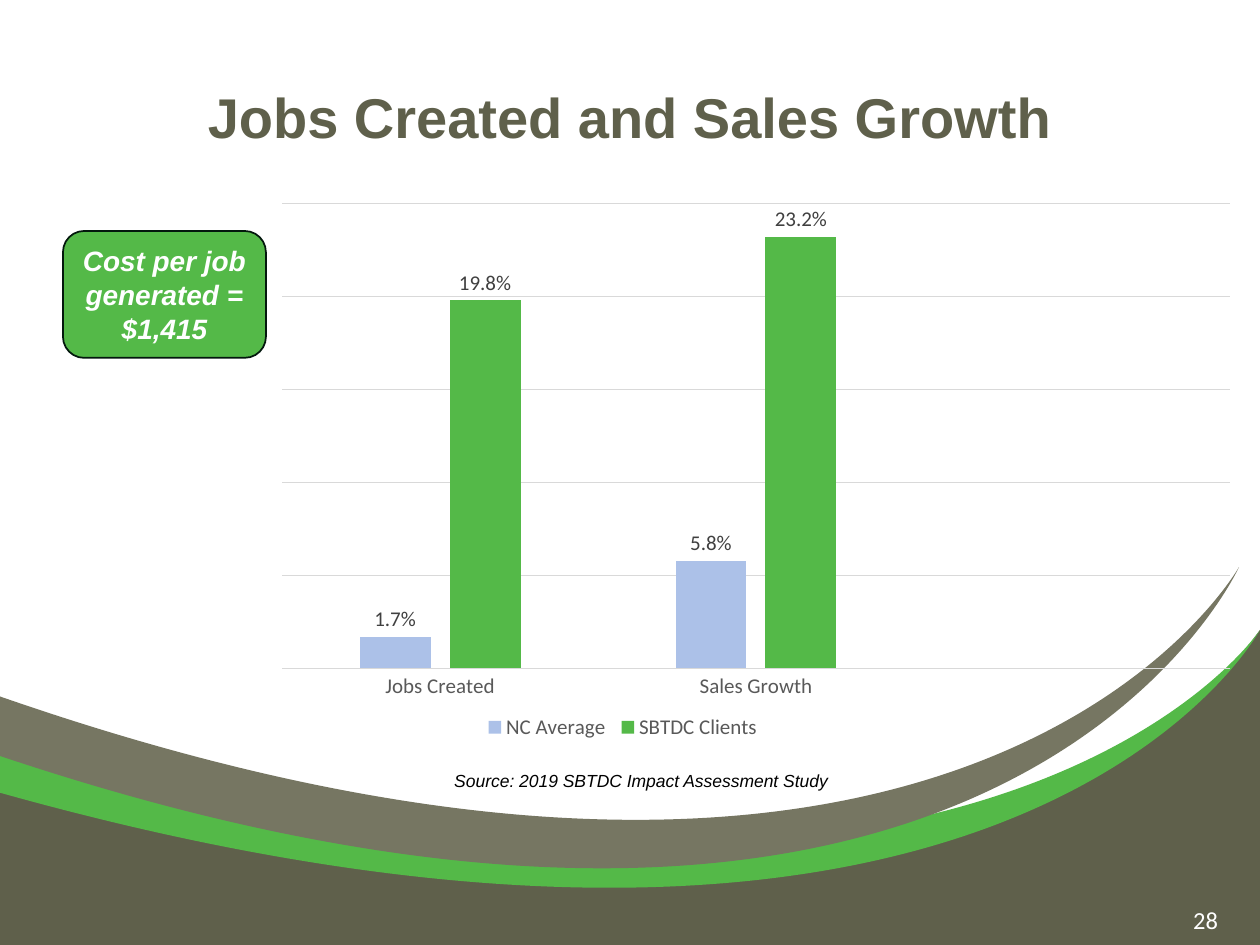
from lxml import etree
from pptx import Presentation
from pptx.chart.data import CategoryChartData
from pptx.dml.color import RGBColor
from pptx.enum.chart import XL_CHART_TYPE as ChartType
from pptx.enum.chart import XL_LABEL_POSITION as LabelPosition
from pptx.enum.chart import XL_LEGEND_POSITION as LegendPosition
from pptx.enum.chart import XL_TICK_LABEL_POSITION as TickLabels
from pptx.enum.chart import XL_TICK_MARK as TickMark
from pptx.enum.shapes import MSO_SHAPE as Shape
from pptx.enum.text import MSO_ANCHOR as Anchor
from pptx.enum.text import PP_ALIGN as Align
from pptx.oxml.ns import qn
from pptx.util import Pt

COLORS = {
    "olive": "5F604B", "green": "54B948", "taupe": "767662", "blue": "ACC1E8",
    "outline": "03180D", "grid": "D9D9D9", "axis": "595959", "label": "404040",
    "white": "FFFFFF", "black": "000000",
}

# Each wave: colour, start point, cubic curves (two controls, end), closing corners
WAVES = [
    ("olive", (0, 448.5),
     [((68.5, 466.5), (178.5, 498), (314, 499)),
      ((613.5, 504), (692, 397.5), (720, 360))],
     [(720, 540), (0, 540)]),
    ("green", (0, 423.5),
     [((569, 588), (720, 360), (720, 360)),
      ((720, 360), (582.5, 616), (0, 453))], []),
    ("taupe", (0, 398),
     [((558.5, 592), (708, 324), (708, 324)),
      ((708, 324), (573, 624), (0, 432.5))], []),
]

TITLE = "Jobs Created and Sales Growth"
CALLOUT = "Cost per job generated = $1,415"
SOURCE = "Source: 2019 SBTDC Impact Assessment Study"
PAGE_NUMBER = "28"

CATEGORIES = ["Jobs Created", "Sales Growth", ""]
SERIES = [
    ("NC Average", "blue", (0.017, 0.058, None)),
    ("SBTDC Clients", "green", (0.198, 0.232, None)),
]
PERCENT = "0.0%"
# Left, top, width and height as shares of the chart
PLOT_AREA = (0.02, 0.02, 0.96, 0.83)
LEGEND_AREA = (0.22, 0.92, 0.29, 0.07)


def rgb(name):
    return RGBColor.from_string(COLORS[name])


def box(*lengths):
    return [Pt(length) for length in lengths]


def style_font(font, size, color, name="Calibri", bold=False, italic=False):
    font.name, font.size = name, Pt(size)
    font.bold, font.italic = bold, italic
    font.color.rgb = rgb(color)


def fill_text(shape, text, align, anchor, **font):
    frame = shape.text_frame
    frame.word_wrap = True
    frame.vertical_anchor = anchor
    frame.text = text
    paragraph = frame.paragraphs[0]
    paragraph.alignment = align
    style_font(paragraph.runs[0].font, **font)
    return frame


def add_wave(slide, color, start, curves, corners):
    """Draw the control points as lines, then join each three into a curve."""
    points = [point for curve in curves for point in curve]
    builder = slide.shapes.build_freeform(*start, scale=float(Pt(1)))
    builder.add_line_segments(points + corners, close=True)
    wave = builder.convert_to_shape()
    lines = list(wave.element.iter(qn("a:lnTo")))
    for first in range(0, len(points), 3):
        curve = etree.Element(qn("a:cubicBezTo"))
        lines[first].addprevious(curve)
        for line in lines[first:first + 3]:
            curve.append(line[0])
            line.getparent().remove(line)
    wave.shadow.inherit = False
    wave.fill.solid()
    wave.fill.fore_color.rgb = rgb(color)
    wave.line.fill.background()


def add_callout(slide):
    callout = slide.shapes.add_shape(Shape.ROUNDED_RECTANGLE, *box(36, 132, 116, 72.5))
    callout.shadow.inherit = False
    callout.fill.solid()
    callout.fill.fore_color.rgb = rgb("green")
    callout.line.color.rgb = rgb("outline")
    callout.line.width = Pt(1)
    fill_text(callout, CALLOUT, Align.CENTER, Anchor.MIDDLE,
              size=16, color="white", name="Arial", bold=True, italic=True)


def make_layout(area, inner=False):
    layout = etree.Element(qn("c:layout"))
    manual = etree.SubElement(layout, qn("c:manualLayout"))
    settings = [("layoutTarget", "inner")] if inner else []
    settings += [("xMode", "edge"), ("yMode", "edge"), *zip("xywh", area)]
    for tag, value in settings:
        etree.SubElement(manual, qn("c:" + tag)).set("val", str(value))
    return layout


def place_chart_parts(chart):
    root = chart.element
    plot_area = next(root.iter(qn("c:plotArea")))
    legend = next(root.iter(qn("c:legend")))
    for parent in (plot_area, legend):
        for layout in parent.findall(qn("c:layout")):
            parent.remove(layout)
    plot_area.insert(0, make_layout(PLOT_AREA, inner=True))
    legend.find(qn("c:legendPos")).addnext(make_layout(LEGEND_AREA))


def add_growth_chart(slide):
    data = CategoryChartData(number_format=PERCENT)
    data.categories = CATEGORIES
    for name, _, values in SERIES:
        data.add_series(name, values)
    chart = slide.shapes.add_chart(
        ChartType.COLUMN_CLUSTERED, *box(150, 110, 564, 320), data).chart
    chart.has_title = False
    style_font(chart.font, 10, "black")

    chart.has_legend = True
    chart.legend.position = LegendPosition.BOTTOM
    chart.legend.include_in_layout = False
    style_font(chart.legend.font, 12, "axis")

    category_axis = chart.category_axis
    category_axis.major_tick_mark = TickMark.NONE
    category_axis.tick_label_position = TickLabels.NEXT_TO_AXIS
    style_font(category_axis.tick_labels.font, 12, "axis")

    value_axis = chart.value_axis
    value_axis.visible = False
    value_axis.minimum_scale, value_axis.maximum_scale = 0, 0.25
    value_axis.major_unit = 0.05
    value_axis.has_major_gridlines = True
    value_axis.tick_labels.number_format = PERCENT
    for line in (category_axis.format.line, value_axis.major_gridlines.format.line):
        line.color.rgb = rgb("grid")
        line.width = Pt(0.75)

    plot = chart.plots[0]
    plot.gap_width, plot.overlap = 219, -27
    plot.vary_by_categories = False
    for series, (_, color, _) in zip(plot.series, SERIES):
        series.format.fill.solid()
        series.format.fill.fore_color.rgb = rgb(color)
        labels = series.data_labels
        labels.show_value = True
        labels.position = LabelPosition.OUTSIDE_END
        labels.number_format, labels.number_format_is_linked = PERCENT, False
        style_font(labels.font, 12, "label")
    place_chart_parts(chart)


def main():
    presentation = Presentation()
    presentation.slide_width, presentation.slide_height = box(720, 540)
    slide = presentation.slides.add_slide(presentation.slide_layouts[6])

    for wave in WAVES:
        add_wave(slide, *wave)

    title = slide.shapes.add_textbox(*box(36, 21.6, 648, 90))
    fill_text(title, TITLE, Align.CENTER, Anchor.MIDDLE,
              size=32, color="olive", name="Arial", bold=True)
    add_callout(slide)
    source = slide.shapes.add_textbox(*box(228, 436.5, 276.5, 19.5))
    fill_text(source, SOURCE, Align.CENTER, Anchor.TOP,
              size=10, color="black", name="Arial", italic=True)
    page = slide.shapes.add_textbox(*box(516, 511.2, 180, 28.8))
    frame = fill_text(page, PAGE_NUMBER, Align.RIGHT, Anchor.MIDDLE, size=14, color="white")
    frame.margin_left = frame.margin_right = frame.margin_top = frame.margin_bottom = 0

    add_growth_chart(slide)
    presentation.save("out.pptx")


if __name__ == "__main__":
    main()
